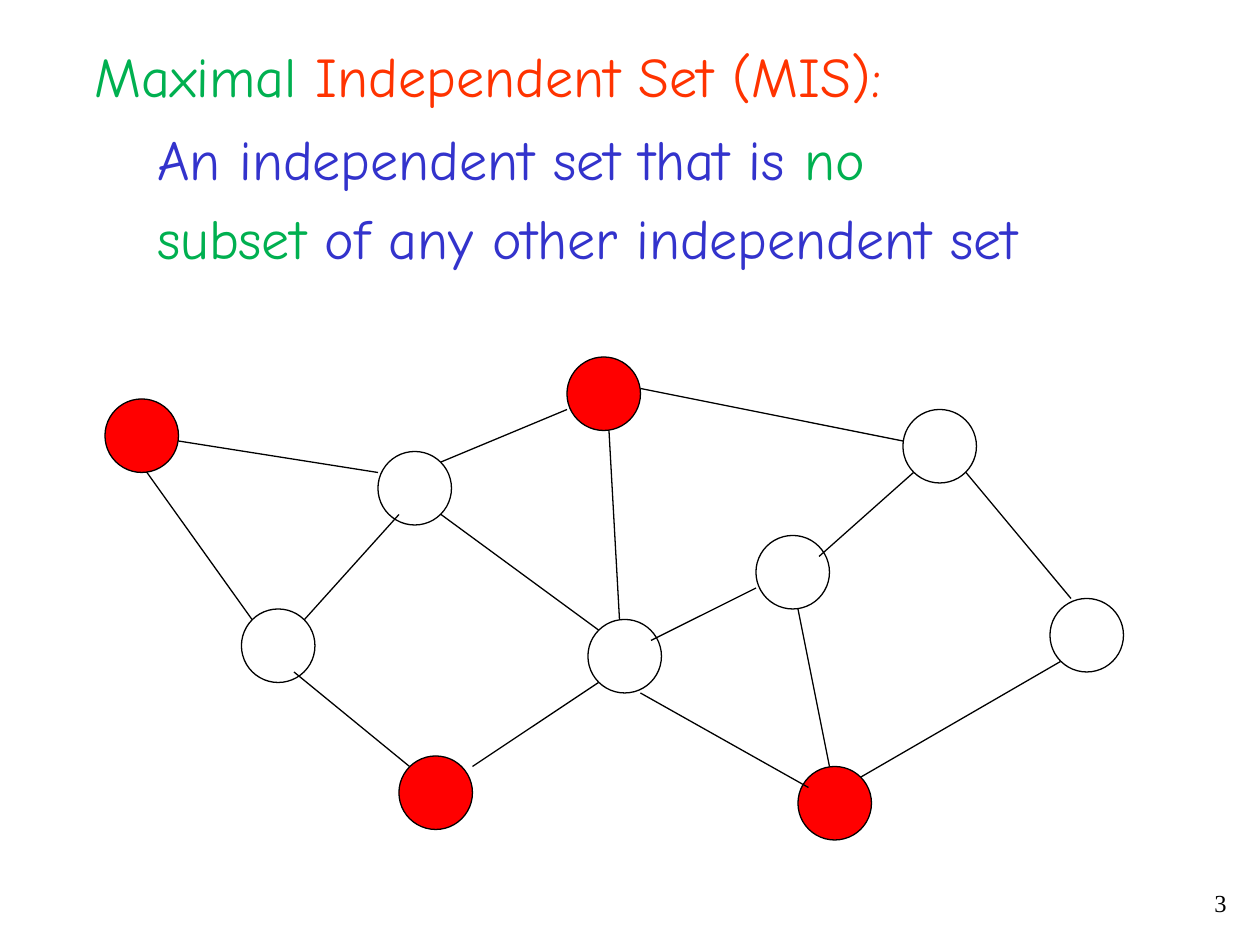
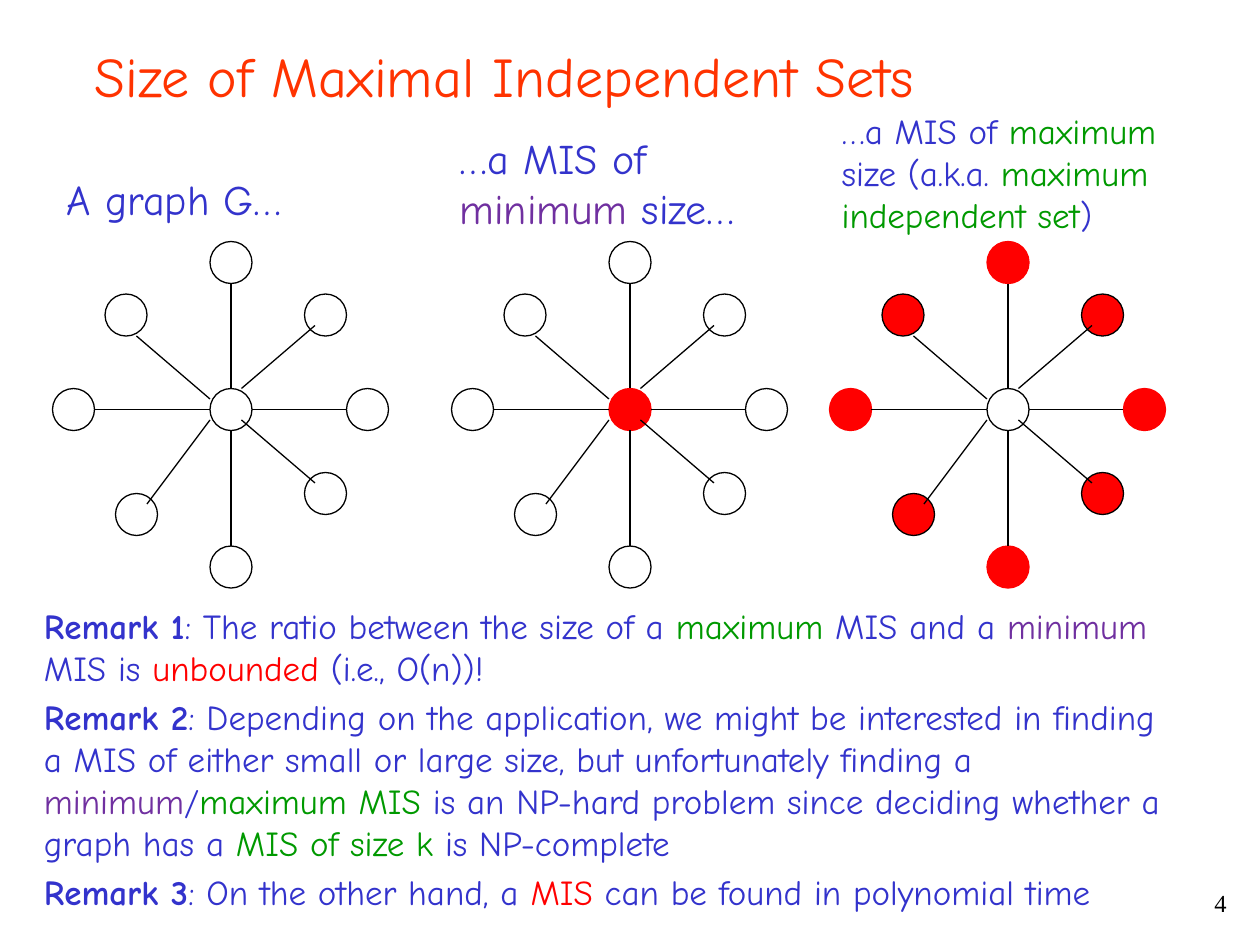
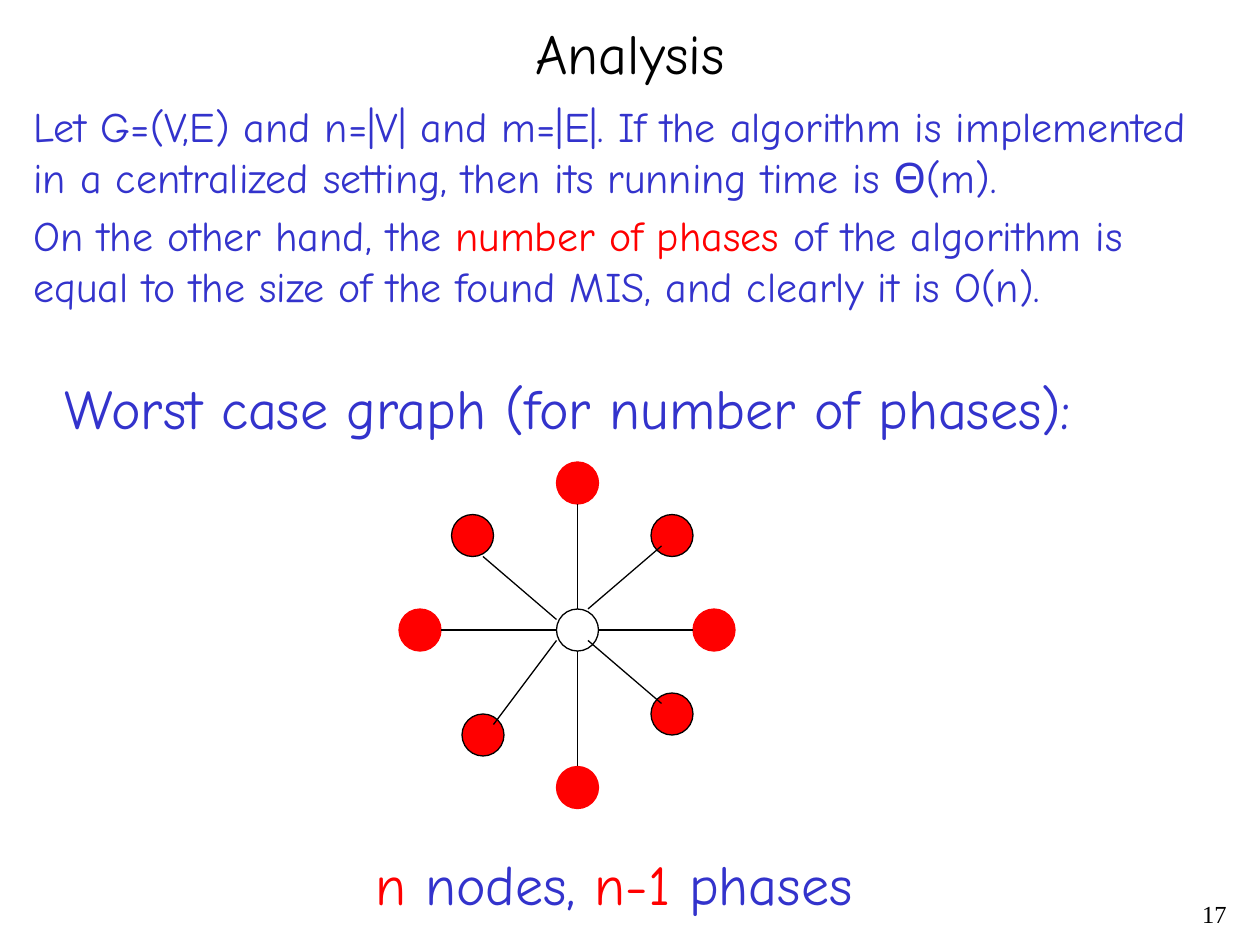
import lxml.etree
import pptx
import pptx.dml.color
import pptx.enum.shapes
import pptx.enum.text
import pptx.oxml.ns
import pptx.util

Pt = pptx.util.Pt
ALIGN = pptx.enum.text.PP_ALIGN
ANCHOR = pptx.enum.text.MSO_ANCHOR

COLORS = {
    "ink": "000000", "body": "3333CC", "heading": "FF3300", "emerald": "00B050",
    "green": "009900", "purple": "7030A0", "red": "FF0000",
}
BODY_FONT = "Comic Neue"
NUMBER_FONT = "Times New Roman"
TITLE_SIZE = 32
GRID = 6

NETWORK = {
    "node_size": 7,
    "nodes": {
        "west": (0, 4), "inner east": (62, 17), "north": (44, 0), "southwest": (13, 24),
        "center": (46, 25), "northeast": (76, 5), "southeast": (66, 39),
        "east": (90, 23), "south": (28, 38), "inner west": (26, 9),
    },
    "edges": [
        (4, 11, 14, 25), (28, 15, 19, 25), (32, 10, 44, 5), (32, 15, 47, 26),
        (35, 39, 47, 31), (18, 30, 29, 39), (52, 27, 62, 22), (51, 3, 76, 8),
        (77, 11, 68, 19), (66, 24, 69, 39), (51, 32, 67, 41), (72, 40, 91, 29),
        (82, 11, 92, 23), (48, 7, 49, 25), (7, 8, 26, 11),
    ],
}
STAR = {
    "node_size": 4,
    "nodes": {
        "hub": (15, 14), "north": (15, 0), "northwest": (5, 5), "southwest": (6, 24),
        "west": (0, 14), "east": (28, 14), "south": (15, 29),
        "northeast": (24, 5), "southeast": (24, 22),
    },
    "edges": [
        (8, 9, 15, 15), (4, 16, 15, 16), (9, 25, 15, 17), (17, 4, 17, 14),
        (17, 18, 17, 29), (18, 14, 25, 8), (19, 16, 28, 16), (18, 17, 25, 23),
    ],
}
STAR_LEAVES = set(STAR["nodes"]) - {"hub"}
RED_OUTLINED = {"hub", "north", "south", "east", "west"}


def rgb(color):
    return pptx.dml.color.RGBColor.from_string(COLORS[color])


def write_text(shape, paragraphs, size, font=BODY_FONT, align=ALIGN.LEFT,
               anchor=ANCHOR.TOP, spacing=0.2):
    frame = shape.text_frame
    frame.word_wrap = True
    frame.auto_size = pptx.enum.text.MSO_AUTO_SIZE.NONE
    frame.vertical_anchor = anchor
    for index, spans in enumerate(paragraphs):
        paragraph = frame.add_paragraph() if index else frame.paragraphs[0]
        paragraph.alignment = align
        paragraph.space_before = Pt(spacing * size)
        paragraph.font.size = Pt(size)
        paragraph.font.name = font
        for text, color, *bold in spans:
            run = paragraph.add_run()
            run.text = text
            run.font.color.rgb = rgb(color)
            if bold:
                run.font.bold = True


def add_text(slide, box, paragraphs, size, **style):
    write_text(slide.shapes.add_textbox(*map(Pt, box)), paragraphs, size, **style)


def add_titled_slide(deck, spans, box, number, number_top=504, **style):
    slide = deck.slides.add_slide(deck.slide_layouts[5])
    title = slide.shapes.title
    title.left, title.top, title.width, title.height = map(Pt, box)
    write_text(title, [spans], TITLE_SIZE, **style)
    add_text(slide, (558, number_top, 150, 24), [[(number, "ink")]], 14,
             font=NUMBER_FONT, align=ALIGN.RIGHT, spacing=0)
    return slide


def draw_graph(slide, left, top, graph, chosen=(), red_outlined=()):
    def place_x(column):
        return Pt(left + column * GRID)

    def place_y(row):
        return Pt(top + row * GRID)

    diameter = Pt(graph["node_size"] * GRID)
    for name, (column, row) in graph["nodes"].items():
        node = slide.shapes.add_shape(pptx.enum.shapes.MSO_SHAPE.OVAL,
                                      place_x(column), place_y(row), diameter, diameter)
        node.shadow.inherit = False
        node.line.width = Pt(0.75)
        node.line.color.rgb = rgb("ink")
        if name in chosen:
            node.fill.solid()
            node.fill.fore_color.rgb = rgb("red")
            if name in red_outlined:
                node.line.color.rgb = rgb("red")
        else:
            node.fill.background()
    for x1, y1, x2, y2 in graph["edges"]:
        edge = slide.shapes.add_connector(pptx.enum.shapes.MSO_CONNECTOR.STRAIGHT,
                                          place_x(x1), place_y(y1), place_x(x2), place_y(y2))
        edge.line.width = Pt(0.75)
        edge.line.color.rgb = rgb("ink")
        lxml.etree.SubElement(edge._element.spPr, pptx.oxml.ns.qn("a:effectLst"))


def build_definition(deck):
    slide = add_titled_slide(
        deck, [("Maximal", "emerald"), (" Independent Set (MIS):", "heading")],
        (46.8, 20.2, 512, 45.4), "3")
    add_text(slide, (82.8, 67.7, 573, 92.9), [
        [("An independent set that is ", "body"), ("no", "emerald")],
        [("subset ", "emerald"), ("of any other independent set", "body")],
    ], 32)
    draw_graph(slide, 60, 204, NETWORK, {"west", "north", "south", "southeast"})


def build_sizes(deck):
    slide = add_titled_slide(deck, [("Size of Maximal Independent Sets", "heading")],
                             (46.8, 20.2, 550, 46), "4")
    for left, chosen in ((30, ()), (258, {"hub"}), (474, STAR_LEAVES)):
        draw_graph(slide, left, 138, STAR, chosen, RED_OUTLINED)
    add_text(slide, (31, 95.8, 143.3, 36.7), [[("A graph G…", "body")]], 24)
    add_text(slide, (255.6, 72, 218.2, 65.5), [[
        ("…a MIS of ", "body"), ("minimum", "purple"), (" size…", "body")]], 24)
    add_text(slide, (473.8, 59, 210.2, 80), [[
        ("…a MIS of ", "body"), ("maximum", "green"), (" size (a.k.a. ", "body"),
        ("maximum independent set", "green"), (")", "body")]], 20)
    add_text(slide, (18, 342, 666, 186.5), [
        [("Remark 1", "body", True), (": The ratio between the size of a ", "body"),
         ("maximum", "green"), (" MIS and a ", "body"), ("minimum", "purple"),
         (" MIS is ", "body"), ("unbounded", "red"), (" (i.e., O(n))!", "body")],
        [("Remark 2", "body", True),
         (": Depending on the application, we might be interested in finding a MIS of "
          "either small or large size, but unfortunately finding a ", "body"),
         ("minimum", "purple"), ("/", "body"), ("maximum MIS", "green"),
         (" is an NP-hard problem since deciding whether a graph has a ", "body"),
         ("MIS of size k", "green"), (" is NP-complete", "body")],
        [("Remark 3", "body", True), (": On the other hand, a ", "body"),
         ("MIS", "red"), (" can be found in polynomial time", "body")],
    ], 20)


def build_analysis(deck):
    slide = add_titled_slide(deck, [("Analysis", "ink")], (12, 6, 696, 48), "17", 510,
                             align=ALIGN.CENTER, anchor=ANCHOR.MIDDLE, spacing=0)
    add_text(slide, (12, 54, 696, 193.7), [
        [("Let G=(V,E) and n=|V| and m=|E|. If the algorithm is implemented in a "
          "centralized setting, then its running time is Θ(m).", "body")],
        [("On the other hand, the ", "body"), ("number of phases ", "red"),
         ("of the algorithm is equal to the size of the found MIS, and clearly it is "
          "O(n).", "body")],
    ], 24)
    add_text(slide, (30, 210, 644.4, 45.4),
             [[("Worst case graph (for number of phases):", "body")]], 32)
    draw_graph(slide, 228, 264, STAR, STAR_LEAVES, RED_OUTLINED)
    add_text(slide, (207.4, 481.7, 302.4, 46), [[
        ("n", "red"), (" nodes, ", "body"), ("n-1", "red"), (" phases", "body")]], 32)


def main():
    deck = pptx.Presentation()
    deck.slide_width, deck.slide_height = Pt(720), Pt(540)
    build_definition(deck)
    build_sizes(deck)
    build_analysis(deck)
    deck.save("out.pptx")


if __name__ == "__main__":
    main()
